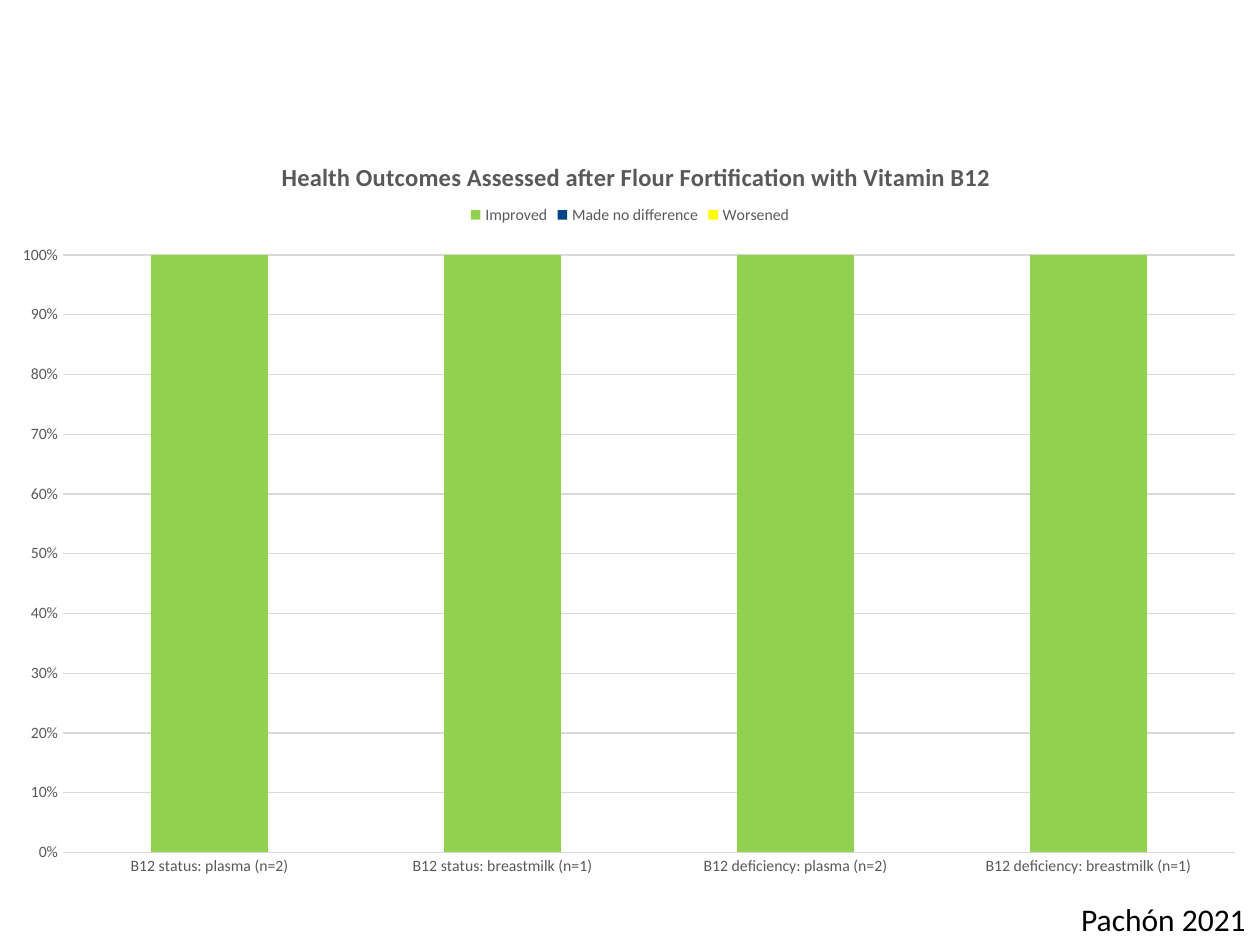
from lxml import etree
from pptx import Presentation
from pptx import util as u
from pptx.chart import data as chart_data
from pptx.dml import color
from pptx.enum import chart as chart_enum
from pptx.enum import text
from pptx.oxml import ns


def paint(target, hex_color):
    """Give a fill, line fill or font one solid colour."""
    if hasattr(target, "solid"):
        target.solid()
        target = target.fore_color
    else:
        target = target.color
    target.rgb = color.RGBColor.from_string(hex_color)


def place(element, following, **fractions):
    """Place a chart part by fractions of the chart, before the tags that follow."""
    for old in element.findall(ns.qn("c:layout")):
        element.remove(old)
    layout = etree.Element(ns.qn("c:layout"))
    manual = etree.SubElement(layout, ns.qn("c:manualLayout"))
    if "w" in fractions:
        etree.SubElement(manual, ns.qn("c:layoutTarget"), val="inner")
    for mode in ("xMode", "yMode"):
        etree.SubElement(manual, ns.qn("c:" + mode), val="edge")
    for key, value in fractions.items():
        etree.SubElement(manual, ns.qn("c:" + key), val=str(value))
    tags = [ns.qn("c:" + name) for name in following]
    next(child for child in element if child.tag in tags).addprevious(layout)


GREY, RULE = "595959", "D9D9D9"

presentation = Presentation()
presentation.slide_width, presentation.slide_height = u.Pt(720), u.Pt(540)
slide = presentation.slides.add_slide(presentation.slide_layouts[6])

# Outcome data
outcomes = {
    "Improved": (100, "92D050"),
    "Made no difference": (0, "004585"),
    "Worsened": (0, "FFFF00"),
}
data = chart_data.CategoryChartData()
data.categories = [
    f"B12 {measure} (n={count})"
    for measure, count in (
        ("status: plasma", 2),
        ("status: breastmilk", 1),
        ("deficiency: plasma", 2),
        ("deficiency: breastmilk", 1),
    )
]
for name, (share, _) in outcomes.items():
    data.add_series(name, [share] * 4)

# Stacked column chart
chart = slide.shapes.add_chart(
    chart_enum.XL_CHART_TYPE.COLUMN_STACKED_100,
    u.Pt(0), u.Pt(71.3), u.Pt(720), u.Pt(437.8), data,
).chart
chart.font.name, chart.font.size = "Calibri", u.Pt(10)
paint(chart.font, "000000")
plot = chart.plots[0]
plot.gap_width, plot.overlap, plot.vary_by_categories = 150, 100, False
for series in plot.series:
    paint(series.format.fill, outcomes[series.name][1])

# Title
chart.has_title = True
title = chart.chart_title
title.include_in_layout = False
title.text_frame.text = "Health Outcomes Assessed after Flour Fortification with Vitamin B12"
title_font = title.text_frame.paragraphs[0].runs[0].font
title_font.size, title_font.bold = u.Pt(14), True

# Legend and axes
chart.has_legend = True
legend = chart.legend
legend.position = chart_enum.XL_LEGEND_POSITION.TOP
legend.include_in_layout = False
category_axis, value_axis = chart.category_axis, chart.value_axis
for axis in (category_axis, value_axis):
    axis.major_tick_mark = axis.minor_tick_mark = chart_enum.XL_TICK_MARK.NONE
for font in (legend.font, category_axis.tick_labels.font, value_axis.tick_labels.font):
    font.size = u.Pt(9)
for font in (title_font, legend.font, category_axis.tick_labels.font, value_axis.tick_labels.font):
    font.name = "Calibri"
    paint(font, GREY)
for line in (category_axis.format.line, value_axis.major_gridlines.format.line):
    line.width = u.Pt(0.75)
    paint(line.fill, RULE)
value_axis.format.line.fill.background()
value_axis.minimum_scale, value_axis.maximum_scale, value_axis.major_unit = 0, 1, 0.1
value_axis.tick_labels.number_format = "0%"
value_axis.tick_labels.number_format_is_linked = False

# Positions inside the chart
plot_area = chart.element.find(".//" + ns.qn("c:plotArea"))
place(title.element if hasattr(title, "element") else title._element, ["overlay"], x=0.22, y=0.04)
place(plot_area, ["barChart"], x=0.05, y=0.17, w=0.93, h=0.78)

# Citation
citation = slide.shapes.add_textbox(u.Pt(586), u.Pt(511), u.Pt(133), u.Pt(29))
frame = citation.text_frame
frame.word_wrap = True
frame.auto_size = text.MSO_AUTO_SIZE.SHAPE_TO_FIT_TEXT
frame.text = "Pachón 2021"
paragraph = frame.paragraphs[0]
paragraph.alignment = text.PP_ALIGN.RIGHT
font = paragraph.runs[0].font
font.name, font.size = "Calibri", u.Pt(18)
paint(font, "000000")

presentation.save("out.pptx")
